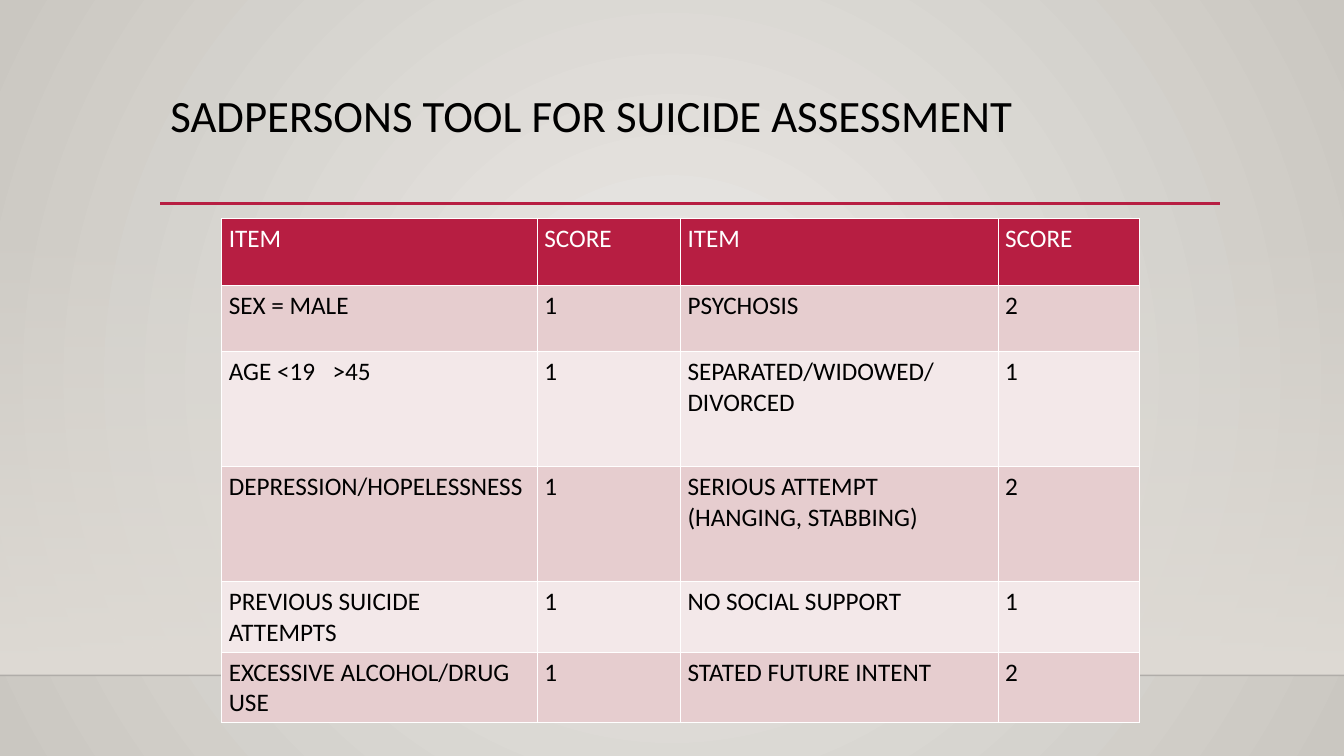
from dataclasses import dataclass

from lxml import etree
from pptx import Presentation, util as u
from pptx.dml.color import RGBColor
from pptx.enum import shapes, text
from pptx.oxml import parse_xml
from pptx.oxml.ns import nsdecls, qn

WIDTH, HEIGHT = u.Inches(13.33), u.Inches(7.5)


@dataclass(frozen=True)
class Theme:
    font: str = "Calibri"
    title_size: int = 32
    table_size: int = 18
    ink: str = "000000"
    accent: str = "B71E42"
    white: str = "FFFFFF"
    bands: tuple = ("E6CDCF", "F3E8E9")
    glow: tuple = ("ECEAE7", "CAC7C1")
    wall: str = "DFDBD5"
    floor_edge: str = "000001"


THEME = Theme()

SCORES = [
    ("ITEM", "SCORE", "ITEM", "SCORE"),
    ("SEX = MALE", "1", "PSYCHOSIS", "2"),
    ("AGE <19\t>45", "1", "SEPARATED/WIDOWED/DIVORCED", "1"),
    ("DEPRESSION/HOPELESSNESS", "1", "SERIOUS ATTEMPT (HANGING, STABBING)", "2"),
    ("PREVIOUS SUICIDE ATTEMPTS", "1", "NO SOCIAL SUPPORT", "1"),
    ("EXCESSIVE ALCOHOL/DRUG USE", "1", "STATED FUTURE INTENT", "2"),
]
COLUMN_WEIGHTS = (3.13, 1.42, 3.15, 1.4)
ROW_WEIGHTS = (0.66, 0.66, 1.14, 1.14, 0.66, 0.66)
AGE_TAB = u.Inches(1.03)


def grid(left, top, width, height):
    """Box in hundredths of the slide's width and height."""
    return (round(left * WIDTH / 100), round(top * HEIGHT / 100),
            round(width * WIDTH / 100), round(height * HEIGHT / 100))


def set_alpha(holder, percent):
    colour = next(holder.iter(qn("a:srgbClr")))
    etree.SubElement(colour, qn("a:alpha"), val=str(percent * 1000))


def add_run(paragraph, words, size, colour):
    run = paragraph.add_run()
    run.text = words
    run.font.name = THEME.font
    run.font.size = u.Pt(size)
    run.font.color.rgb = RGBColor.from_string(colour)


def fill_gradient(fill, colours):
    fill.gradient()
    for stop, colour in zip(fill.gradient_stops, colours):
        stop.color.rgb = RGBColor.from_string(colour)


def add_rule(slide, box, colour, weight):
    left, top, width, height = box
    rule = slide.shapes.add_connector(
        shapes.MSO_CONNECTOR.STRAIGHT, left, top, left + width, top + height)
    rule.line.color.rgb = RGBColor.from_string(colour)
    rule.line.width = u.Pt(weight)
    etree.SubElement(rule.element.spPr, qn("a:effectLst"))
    return rule


def add_backdrop(slide, box):
    fill_gradient(slide.background.fill, THEME.glow)
    glow = next(slide.element.iter(qn("a:gradFill")))
    glow.remove(glow.find(qn("a:lin")))
    glow.append(parse_xml(
        f'<a:path {nsdecls("a")} path="circle">'
        '<a:fillToRect l="50000" t="50000" r="50000" b="50000"/></a:path>'))

    left, top, width, height = box
    wall = slide.shapes.add_shape(shapes.MSO_SHAPE.RECTANGLE, *box)
    wall.shadow.inherit = False
    wall.line.fill.background()
    fill_gradient(wall.fill, (THEME.wall, THEME.wall))
    wall.fill.gradient_angle = 270
    set_alpha(wall.element.spPr, 0)

    floor_edge = add_rule(slide, (left, top + height, width, 0), THEME.floor_edge, 1)
    set_alpha(floor_edge.element.spPr, 20)


def add_heading(slide, box, words):
    left, top, width, height = box
    add_rule(slide, (left, top + height, width, 0), THEME.accent, 2.5)
    heading = slide.shapes.add_textbox(*box).text_frame
    heading.word_wrap = True
    heading.vertical_anchor = text.MSO_ANCHOR.TOP
    heading.paragraphs[0].line_spacing = 0.9
    add_run(heading.paragraphs[0], words, THEME.title_size, THEME.ink)


def add_cell_borders(cell):
    properties = cell._tc.get_or_add_tcPr()
    for side in "LRTB":
        properties.append(parse_xml(
            f'<a:ln{side} {nsdecls("a")} w="12700"><a:solidFill>'
            f'<a:srgbClr val="{THEME.white}"/></a:solidFill></a:ln{side}>'))


def fill_cell(cell, words, fill, colour):
    cell.margin_left = cell.margin_right = u.Inches(0.07)
    cell.margin_top = cell.margin_bottom = u.Inches(0.05)
    add_cell_borders(cell)
    cell.fill.solid()
    cell.fill.fore_color.rgb = RGBColor.from_string(fill)
    entry = cell.text_frame.paragraphs[0]
    if "\t" in words:
        tabs = etree.SubElement(entry._p.get_or_add_pPr(), qn("a:tabLst"))
        etree.SubElement(tabs, qn("a:tab"), pos=str(AGE_TAB), algn="l")
    add_run(entry, words, THEME.table_size, colour)


def add_score_table(slide, box):
    width, height = box[2:]
    scores = slide.shapes.add_table(len(SCORES), len(SCORES[0]), *box).table
    scores.first_row = scores.horz_banding = False
    for column, weight in zip(scores.columns, COLUMN_WEIGHTS):
        column.width = round(width * weight / sum(COLUMN_WEIGHTS))
    for row, weight in zip(scores.rows, ROW_WEIGHTS):
        row.height = round(height * weight / sum(ROW_WEIGHTS))
    for index, (row, entries) in enumerate(zip(scores.rows, SCORES)):
        fill = THEME.bands[(index - 1) % 2] if index else THEME.accent
        colour = THEME.ink if index else THEME.white
        for cell, words in zip(row.cells, entries):
            fill_cell(cell, words, fill, colour)


def main():
    deck = Presentation()
    deck.slide_width, deck.slide_height = WIDTH, HEIGHT
    slide = deck.slides.add_slide(deck.slide_layouts[6])
    add_backdrop(slide, grid(0, 29.47, 100, 59.87))
    add_heading(slide, grid(11.93, 11.73, 78.82, 15.2),
                "SADPERSONS TOOL FOR SUICIDE ASSESSMENT")
    add_score_table(slide, grid(16.5, 28.93, 68.27, 65.6))
    deck.save("out.pptx")


if __name__ == "__main__":
    main()
